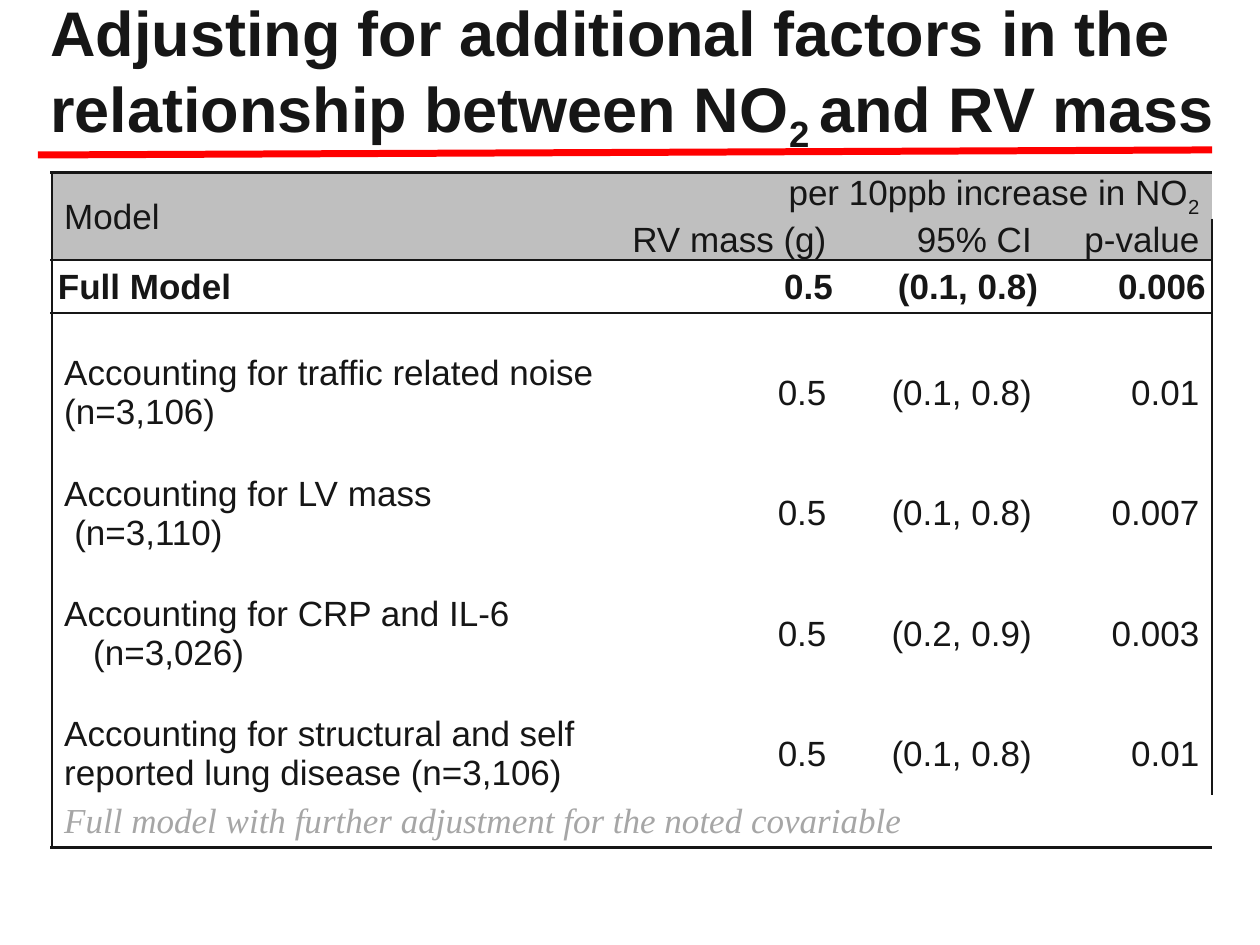
"""Build a slide with a table of adjusted NO₂ and RV mass estimates."""
from lxml import etree
from pptx import Presentation
from pptx.dml.color import RGBColor
from pptx.enum.shapes import MSO_CONNECTOR
from pptx.enum.text import MSO_ANCHOR, PP_ALIGN
from pptx.oxml.ns import qn
from pptx.util import Inches, Pt

LEFT, RIGHT = PP_ALIGN.LEFT, PP_ALIGN.RIGHT
MIDDLE, BOTTOM = MSO_ANCHOR.MIDDLE, MSO_ANCHOR.BOTTOM
STRAIGHT = MSO_CONNECTOR.STRAIGHT
NO_STYLE = "{2D5ABB26-0587-4C30-8999-92F81FD0307C}"
THEME = {
    "ink": "161616", "header": "BFBFBF", "body": "FFFFFF", "note": "A6A6A6", "rule": "FF0000",
    "sans": "Arial", "serif": "Times New Roman",
    "title": 36, "text": 20, "border": 1.5, "rule_width": 4,
}
COLS = [4.48, 1.77, 1.63, 1.33]
HEADER, FULL, GAP, MODEL = [0.36, 0.33], 0.42, 0.3, 0.65
MODELS = [
    (["Accounting for traffic related noise (n=3,106)"], 0, ["0.5", "(0.1, 0.8)", "0.01"]),
    (["Accounting for LV mass", "(n=3,110)"], 0.08, ["0.5", "(0.1, 0.8)", "0.007"]),
    (["Accounting for CRP and IL-6", "(n=3,026)"], 0.23, ["0.5", "(0.2, 0.9)", "0.003"]),
    (["Accounting for structural and self reported lung disease (n=3,106)"], 0,
     ["0.5", "(0.1, 0.8)", "0.01"]),
]
ROWS = HEADER + [FULL] + [GAP, MODEL] * len(MODELS) + [FULL]
LAST_ROW, LAST_COL = len(ROWS) - 1, len(COLS) - 1


def add_run(p, text, size=THEME["text"], face=THEME["sans"], color=THEME["ink"],
            bold=False, italic=False, sub=False):
    """Append a formatted run to a paragraph."""
    r = p.add_run()
    r.text = text
    r.font.size, r.font.name = Pt(size), face
    r.font.bold, r.font.italic = bold, italic
    r.font.color.rgb = RGBColor.from_string(color)
    if sub:
        r.font._element.set("baseline", "-25000")


def fill_cell(cell, lines, align=LEFT, indent=0, **style):
    """Write one paragraph per line, indenting those after the first."""
    tf = cell.text_frame
    for i, line in enumerate(lines):
        p = tf.add_paragraph() if i else tf.paragraphs[0]
        p.alignment = align
        if i:
            p._p.get_or_add_pPr().set("marL", str(Inches(indent)))
        add_run(p, line, **style)


prs = Presentation()
prs.slide_width, prs.slide_height = Inches(10), Inches(7.5)
s = prs.slides.add_slide(prs.slide_layouts[5])

title = s.shapes.title
title.left, title.top, title.width, title.height = [Inches(v) for v in (0.3, 0, 9.7, 1.19)]
tf = title.text_frame
tf.word_wrap, tf.vertical_anchor = True, MIDDLE
p = tf.paragraphs[0]
p.alignment, p.line_spacing = LEFT, 0.9
for text, sub in [("Adjusting for additional factors in the relationship between NO", False),
                  ("2 ", True), ("and RV mass", False)]:
    add_run(p, text, THEME["title"], bold=True, sub=sub)

frame = s.shapes.add_table(len(ROWS), len(COLS), Inches(0.41), Inches(1.37),
                           Inches(sum(COLS)), Inches(sum(ROWS)))
table = frame.table
table.first_row = table.horz_banding = False
table._tbl.tblPr.find(qn("a:tableStyleId")).text = NO_STYLE
for col, width in zip(table.columns, COLS):
    col.width = Inches(width)
for row, height in zip(table.rows, ROWS):
    row.height = Inches(height)

for i in range(len(ROWS)):
    for j in range(len(COLS)):
        cell = table.cell(i, j)
        full = i == 2
        cell.vertical_anchor = BOTTOM if full else MIDDLE
        cell.margin_left = cell.margin_right = Inches(0.05 if full else 0.1)
        cell.margin_top = Inches(0.05 if full else 0 if ROWS[i] == GAP else 0.01)
        cell.margin_bottom = Inches(0.05 if full else 0)
        cell.fill.solid()
        cell.fill.fore_color.rgb = RGBColor.from_string(THEME["header" if i < 2 else "body"])
        edges = {"lnL": j == 0, "lnR": j == LAST_COL, "lnT": i in (0, 2),
                 "lnB": i in (1, LAST_ROW)}
        tcPr = cell._tc.get_or_add_tcPr()
        for k, tag in enumerate(edge for edge, on in edges.items() if on):
            ln = etree.Element(qn(f"a:{tag}"), w=str(Pt(THEME["border"])))
            paint = etree.SubElement(ln, qn("a:solidFill"))
            etree.SubElement(paint, qn("a:srgbClr"), val=THEME["ink"])
            tcPr.insert(k, ln)

table.cell(0, 0).merge(table.cell(1, 0))
table.cell(0, 1).merge(table.cell(0, LAST_COL))
table.cell(LAST_ROW, 0).merge(table.cell(LAST_ROW, LAST_COL))

fill_cell(table.cell(0, 0), ["Model"])
fill_cell(table.cell(0, 1), ["per 10ppb increase in NO"], RIGHT)
add_run(table.cell(0, 1).text_frame.paragraphs[0], "2", sub=True)
fill_cell(table.cell(2, 0), ["Full Model"], bold=True)
for i, values, bold in [(1, ["RV mass (g)", "95% CI", "p-value"], False),
                        (2, ["0.5", "(0.1, 0.8)", "0.006"], True),
                        *[(4 + 2 * n, m[2], False) for n, m in enumerate(MODELS)]]:
    for j, value in enumerate(values, 1):
        fill_cell(table.cell(i, j), [value], RIGHT, bold=bold)
for n, (lines, indent, _) in enumerate(MODELS):
    fill_cell(table.cell(4 + 2 * n, 0), lines, indent=indent)
fill_cell(table.cell(LAST_ROW, 0), ["Full model with further adjustment for the noted covariable"],
          face=THEME["serif"], color=THEME["note"], italic=True)

rule = s.shapes.add_connector(STRAIGHT, Inches(0.3), Inches(1.23), Inches(9.62), Inches(1.19))
rule.line.color.rgb = RGBColor.from_string(THEME["rule"])
rule.line.width = Pt(THEME["rule_width"])
etree.SubElement(rule._element.spPr, qn("a:effectLst"))

prs.save("out.pptx")
